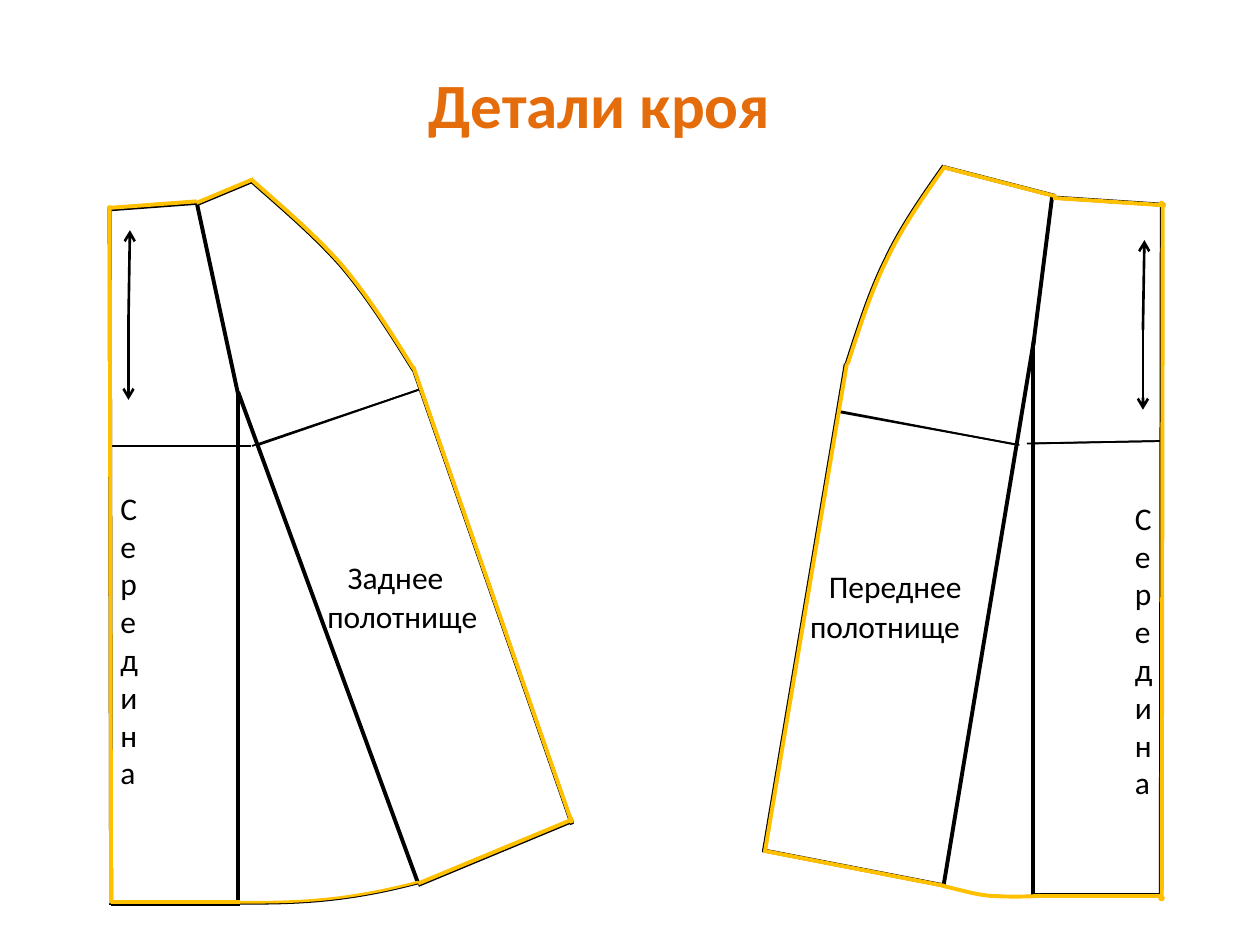
from dataclasses import dataclass
from itertools import chain
from lxml import etree
from pptx import Presentation
from pptx.dml.color import RGBColor
from pptx.enum.shapes import MSO_CONNECTOR, MSO_SHAPE
from pptx.enum.text import MSO_AUTO_SIZE, PP_ALIGN
from pptx.oxml.ns import qn
from pptx.slide import Slide
from pptx.util import Cm, Pt

STRAIGHT = MSO_CONNECTOR.STRAIGHT
OVAL = MSO_SHAPE.OVAL
FIT_SHAPE = MSO_AUTO_SIZE.SHAPE_TO_FIT_TEXT
LEFT, CENTER = PP_ALIGN.LEFT, PP_ALIGN.CENTER
BLACK = RGBColor(0x00, 0x00, 0x00)
GOLD = RGBColor(0xFF, 0xC0, 0x00)
BLUE = RGBColor(0x4F, 0x81, 0xBD)
ORANGE = RGBColor(0xE4, 0x6C, 0x0A)
FONT = "Calibri"
THIN, MEDIUM, THICK = 1, 1.5, 2.25

Point = tuple[float, float]


@dataclass(frozen=True)
class Segment:
    start: Point
    end: Point


@dataclass(frozen=True)
class Curve:
    points: tuple[Point, ...]
    under_width: float
    top_width: float


@dataclass(frozen=True)
class Label:
    text: str
    left: float
    top: float
    width: float
    height: float = 1.02
    size: int = 18
    color: RGBColor = BLACK
    bold: bool = False
    alignment: PP_ALIGN = LEFT
    wrap: bool = True


@dataclass(frozen=True)
class Panel:
    edges: tuple[Segment, ...]
    curves: tuple[Curve, ...]
    seams: tuple[Segment, ...]
    hip_lines: tuple[Segment, ...]
    under_shift: Point
    grain: Point


BACK = Panel(
    edges=(
        Segment((11.56, 16.51), (8.43, 17.81)),
        Segment((8.33, 7.39), (11.53, 16.59)),
        Segment((3.96, 4.09), (5.11, 3.61)),
        Segment((4.83, 18.19), (2.24, 18.19)),
        Segment((2.24, 18.21), (2.21, 4.14)),
        Segment((2.21, 4.19), (3.96, 4.06)),
    ),
    curves=(
        Curve(((4.83, 18.19), (5.84, 18.19), (6.88, 18.19), (8.43, 17.78)), THIN, MEDIUM),
        Curve(((5.08, 3.63), (5.69, 4.17), (6.32, 4.7), (6.88, 5.33),
               (7.42, 5.97), (7.87, 6.68), (8.33, 7.42)), THICK, THICK),
    ),
    seams=(
        Segment((3.96, 4.06), (4.8, 7.95)),
        Segment((4.8, 7.9), (8.43, 17.81)),
        Segment((4.8, 7.95), (4.8, 18.24)),
    ),
    hip_lines=(
        Segment((5.08, 8.99), (8.46, 7.85)),
        Segment((5.21, 8.97), (8.46, 7.85)),
        Segment((2.21, 8.99), (4.8, 8.99)),
        Segment((2.21, 8.99), (5.05, 8.99)),
    ),
    under_shift=(0, 0.03),
    grain=(2.59, 6.45),
)

FRONT = Panel(
    edges=(
        Segment((23.44, 4.11), (23.42, 18.11)),
        Segment((21.23, 3.99), (23.5, 4.14)),
        Segment((19.05, 3.38), (21.29, 3.96)),
        Segment((15.39, 17.15), (19.05, 17.86)),
        Segment((17.07, 7.34), (15.42, 17.17)),
        Segment((23.42, 18.06), (20.85, 18.06)),
    ),
    curves=(
        Curve(((17.09, 7.34), (17.32, 6.63), (17.55, 5.89), (17.88, 5.23),
               (18.19, 4.57), (18.62, 3.96), (19.05, 3.35)), THICK, THICK),
        Curve(((20.98, 18.06), (20.62, 18.08), (20.29, 18.08), (19.96, 18.06),
               (19.63, 18.03), (19.33, 17.93), (19, 17.86)), THIN, THICK),
    ),
    seams=(
        Segment((20.85, 6.81), (19.02, 17.86)),
        Segment((20.83, 6.96), (20.83, 18.06)),
        Segment((21.21, 3.96), (20.83, 6.96)),
    ),
    hip_lines=(
        Segment((20.83, 8.94), (23.42, 8.89)),
        Segment((20.7, 8.94), (23.42, 8.89)),
        Segment((16.89, 8.28), (20.52, 8.97)),
        Segment((16.92, 8.31), (20.55, 8.97)),
    ),
    under_shift=(-0.02, -0.01),
    grain=(23.04, 6.65),
)

MIDDLE = "\n".join("Середина")
LABELS = (
    Label("Заднее", 6.76, 11.13, 2.59),
    Label("полотнище", 6.35, 11.91, 3.56, wrap=False),
    Label("Переднее", 16.46, 11.3, 3.56),
    Label("полотнище", 16.08, 12.12, 3.58),
    Label("Детали кроя", 7.92, 1.19, 8.33, 1.8, 36, ORANGE, True, CENTER),
    Label(MIDDLE, 22.63, 9.93, 1.19, 8.71),
    Label(MIDDLE, 2.18, 9.73, 1.19, 8.71),
)
CORNERS = ((23.39, 4.09), (23.39, 18.08))
CORNER_SIZE = 0.05


def draw_line(slide: Slide, segment: Segment, color: RGBColor, width: float,
              shift: Point = (0, 0), arrow: bool = False) -> None:
    ends = [Cm(value + offset) for point in (segment.start, segment.end)
            for value, offset in zip(point, shift)]
    connector = slide.shapes.add_connector(STRAIGHT, *ends)
    connector.line.color.rgb = color
    connector.line.width = Pt(width)
    if arrow:
        line = connector.line._get_or_add_ln()
        etree.SubElement(line, qn("a:tailEnd"), type="arrow")
    etree.SubElement(connector._element.spPr, qn("a:effectLst"))


def draw_curve(slide: Slide, curve: Curve, color: RGBColor, width: float,
               shift: Point = (0, 0)) -> None:
    points = [(Cm(x + shift[0]), Cm(y + shift[1])) for x, y in curve.points]
    builder = slide.shapes.build_freeform(*points[0])
    builder.add_line_segments(points[1:], close=False)
    shape = builder.convert_to_shape()
    outline = shape._element.xpath(".//a:path")[0]
    for index, line_to in enumerate(outline.findall(qn("a:lnTo"))):
        if index % 3 == 0:
            bezier = etree.SubElement(outline, qn("a:cubicBezTo"))
        bezier.append(line_to[0])
        outline.remove(line_to)
    shape.fill.background()
    shape.line.color.rgb = color
    shape.line.width = Pt(width)
    shape.shadow.inherit = False


def draw_under(slide: Slide, panel: Panel) -> None:
    for edge in panel.edges:
        draw_line(slide, edge, BLACK, THICK, panel.under_shift)
    for curve in panel.curves:
        draw_curve(slide, curve, BLACK, curve.under_width, panel.under_shift)
    for seam in panel.seams:
        draw_line(slide, seam, BLACK, THICK)
    for hip_line in panel.hip_lines:
        draw_line(slide, hip_line, BLACK, THIN)
    x, y = panel.grain
    for end in ((x, y + 1.61), (x + 0.03, y - 1.81)):
        draw_line(slide, Segment(panel.grain, end), BLACK, MEDIUM, arrow=True)


def draw_top(slide: Slide, panel: Panel) -> None:
    for edge in panel.edges:
        draw_line(slide, edge, GOLD, THICK)
    for curve in panel.curves:
        draw_curve(slide, curve, GOLD, curve.top_width)


def draw_label(slide: Slide, label: Label) -> None:
    box = slide.shapes.add_textbox(Cm(label.left), Cm(label.top), Cm(label.width), Cm(label.height))
    frame = box.text_frame
    frame.word_wrap = label.wrap
    frame.auto_size = FIT_SHAPE
    frame.text = label.text
    for paragraph in frame.paragraphs:
        paragraph.alignment = label.alignment
    for run in chain.from_iterable(paragraph.runs for paragraph in frame.paragraphs):
        run.font.name = FONT
        run.font.size = Pt(label.size)
        run.font.bold = label.bold
        run.font.color.rgb = label.color


def draw_corner(slide: Slide, corner: Point) -> None:
    shape = slide.shapes.add_shape(OVAL, *map(Cm, corner), Cm(CORNER_SIZE), Cm(CORNER_SIZE))
    shape.fill.solid()
    shape.fill.fore_color.rgb = BLUE
    shape.line.color.rgb = GOLD
    shape.line.width = Pt(THICK)
    shape.shadow.inherit = False


def main() -> None:
    presentation = Presentation()
    presentation.slide_width, presentation.slide_height = Cm(25.4), Cm(19.05)
    slide = presentation.slides.add_slide(presentation.slide_layouts[6])
    for panel in (BACK, FRONT):
        draw_under(slide, panel)
    for label in LABELS:
        draw_label(slide, label)
    for panel in (BACK, FRONT):
        draw_top(slide, panel)
    for corner in CORNERS:
        draw_corner(slide, corner)
    presentation.save("out.pptx")


if __name__ == "__main__":
    main()
